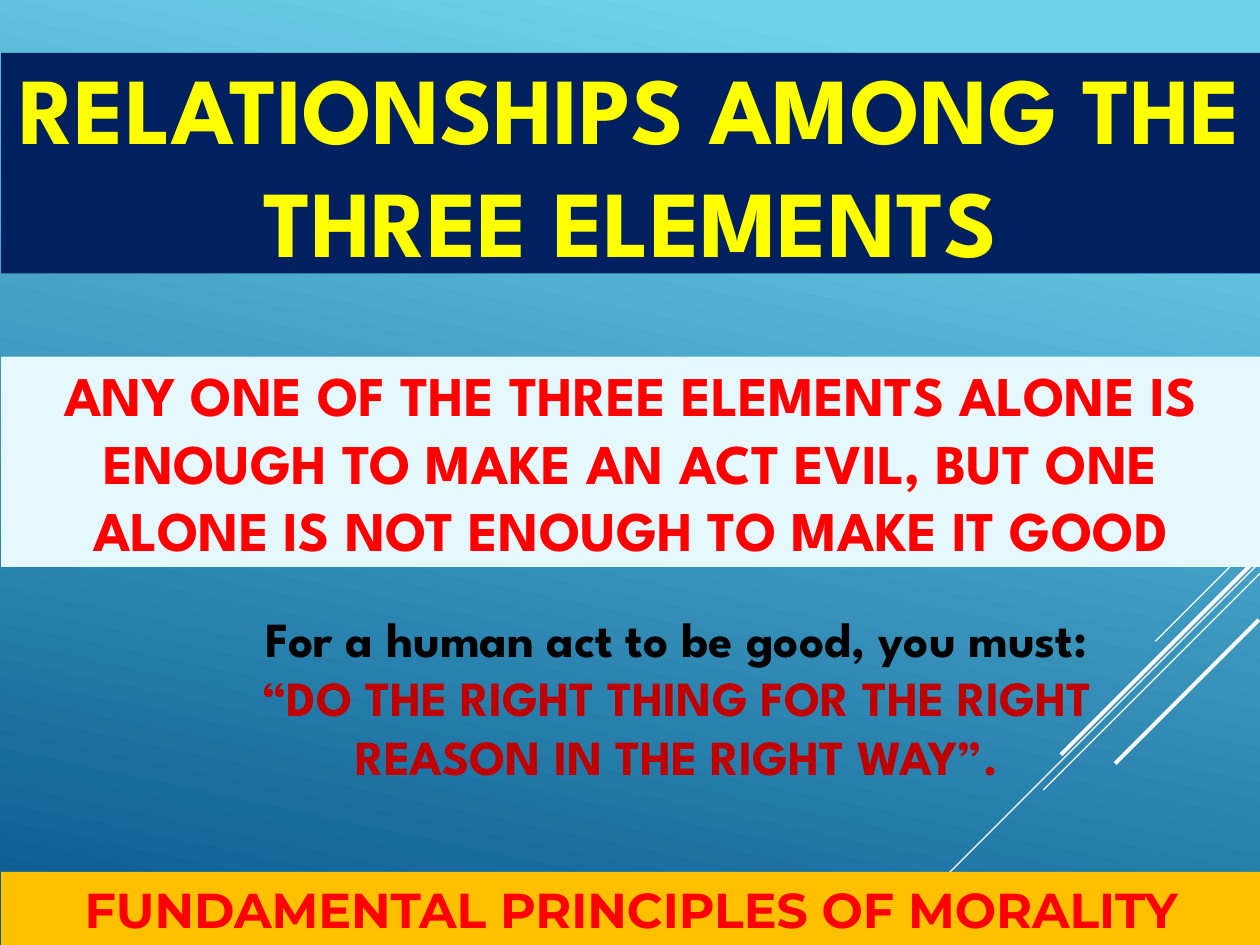
from dataclasses import dataclass

from pptx import Presentation
from pptx.dml.color import RGBColor
from pptx.enum.shapes import MSO_CONNECTOR, MSO_SHAPE
from pptx.enum.text import MSO_ANCHOR, MSO_AUTO_SIZE, PP_ALIGN
from pptx.oxml.ns import qn
from pptx.util import Inches, Pt


@dataclass(frozen=True)
class Theme:
    sky: str = "6ED2EB"
    ocean: str = "06588E"
    navy: str = "002060"
    yellow: str = "FFFF00"
    ice: str = "E4F8FD"
    amber: str = "FFC000"
    red: str = "FF0000"
    dark_red: str = "C00000"
    black: str = "000000"
    white: str = "FFFFFF"
    heading_font: str = "League Spartan"
    footer_font: str = "Montserrat"
    title_size: int = 54
    statement_size: int = 32
    text_size: int = 28


THEME = Theme()
LEFT = 0.01
TITLE_LAYOUT = 5
THIN, THICK = 0.75, 2.25
# Start x, start y, horizontal run, line width; every ray falls at 45 degrees.
RAYS = [
    (10, 4.26, 0.83, THIN),
    (10, 4.46, 2.7, THIN),
    (10, 4.55, 1.72, THIN),
    (9.99, 4.42, 1.57, THICK),
    (9.99, 4.92, 1.14, THICK),
]


def rgb(color):
    return RGBColor.from_string(color)


def paint_background(page):
    fill = page.background.fill
    fill.gradient()
    fill.gradient_angle = 258
    stops = zip(fill.gradient_stops, [(0.1, THEME.sky), (1, THEME.ocean)])
    for stop, (position, color) in stops:
        stop.position = position
        stop.color.rgb = rgb(color)


def add_ray(page, x, y, run, width):
    ray = page.shapes.add_connector(
        MSO_CONNECTOR.STRAIGHT,
        Inches(x), Inches(y), Inches(x - run), Inches(y + run),
    )
    ray.line.color.rgb = rgb(THEME.white)
    ray.line.width = Pt(width)
    properties = ray._element.spPr
    properties.append(properties.makeelement(qn("a:effectLst"), {}))


def write(para, text, size, color, font=THEME.heading_font):
    para.alignment = PP_ALIGN.CENTER
    span = para.add_run()
    span.text = text
    span.font.name = font
    span.font.size = Pt(size)
    span.font.bold = True
    span.font.color.rgb = rgb(color)


def space_around(para, size):
    para.space_before = Pt(0.2 * size)
    para.space_after = Pt(6)


def style_band(band, color):
    """Give a full-width band its fill and text frame, and return its paragraph."""
    band.fill.solid()
    band.fill.fore_color.rgb = rgb(color)
    frame = band.text_frame
    frame.word_wrap = True
    frame.auto_size = MSO_AUTO_SIZE.NONE
    frame.vertical_anchor = MSO_ANCHOR.MIDDLE
    return frame.paragraphs[0]


def fill_title(page, text):
    title = page.shapes.title
    title.left, title.top = Inches(LEFT), Inches(0.42)
    title.width, title.height = Inches(9.99), Inches(1.75)
    para = style_band(title, THEME.navy)
    space_around(para, THEME.title_size)
    write(para, text, THEME.title_size, THEME.yellow)


def add_band(page, top, height, color):
    band = page.shapes.add_shape(
        MSO_SHAPE.RECTANGLE, Inches(LEFT), Inches(top), Inches(10), Inches(height)
    )
    band.shadow.inherit = False
    band.line.fill.background()
    return style_band(band, color)


def add_advice(page, lines):
    box = page.shapes.add_textbox(Inches(1.6), Inches(4.78), Inches(7.54), Inches(1.51))
    frame = box.text_frame
    frame.word_wrap = True
    frame.auto_size = MSO_AUTO_SIZE.SHAPE_TO_FIT_TEXT
    for index, (text, color) in enumerate(lines):
        para = frame.add_paragraph() if index else frame.paragraphs[0]
        write(para, text, THEME.text_size, color)


def main():
    deck = Presentation()
    deck.slide_width, deck.slide_height = Inches(10), Inches(7.5)
    page = deck.slides.add_slide(deck.slide_layouts[TITLE_LAYOUT])
    paint_background(page)
    for ray in RAYS:
        add_ray(page, *ray)

    fill_title(page, "RELATIONSHIPS AMONG THE THREE ELEMENTS")

    footer = add_band(page, 6.92, 0.58, THEME.amber)
    write(footer, "FUNDAMENTAL PRINCIPLES OF MORALITY",
          THEME.text_size, THEME.red, THEME.footer_font)

    statement = add_band(page, 2.83, 1.67, THEME.ice)
    space_around(statement, THEME.statement_size)
    write(statement,
          "ANY ONE OF THE THREE ELEMENTS ALONE IS ENOUGH TO MAKE AN ACT EVIL, "
          "BUT ONE ALONE IS NOT ENOUGH TO MAKE IT GOOD",
          THEME.statement_size, THEME.red)

    add_advice(page, [
        ("For a human act to be good, you must:", THEME.black),
        ("“DO THE RIGHT THING FOR THE RIGHT REASON IN THE RIGHT WAY”.", THEME.dark_red),
    ])
    deck.save("out.pptx")


if __name__ == "__main__":
    main()
